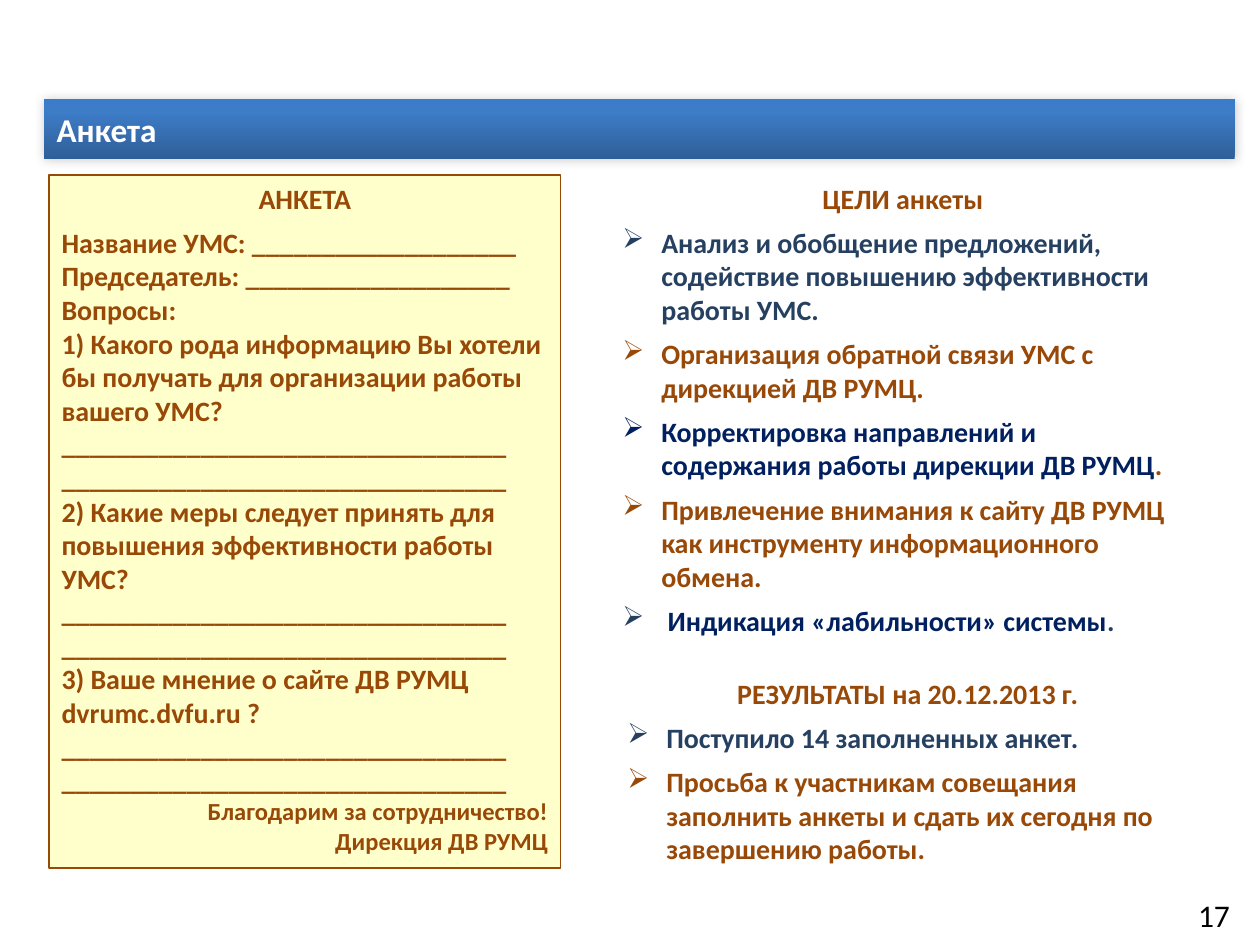
from copy import deepcopy

from lxml import etree
from pptx import Presentation
from pptx import util as u
from pptx.dml.color import RGBColor
from pptx.enum import shapes, text
from pptx.oxml import ns

WIDTH, HEIGHT = u.Inches(10), u.Inches(7.5)
FONT = "Calibri"
BROWN = RGBColor(0x98, 0x48, 0x07)
SLATE = RGBColor(0x25, 0x40, 0x61)
NAVY = RGBColor(0x00, 0x20, 0x60)
CREAM = RGBColor(0xFF, 0xFF, 0xCC)
WHITE = RGBColor(0xFF, 0xFF, 0xFF)
BLACK = RGBColor(0x00, 0x00, 0x00)
BANNER_STOPS = [
    (0, RGBColor(0x2F, 0x5F, 0x99)),
    (0.8, RGBColor(0x3D, 0x7C, 0xC7)),
    (1, RGBColor(0x3A, 0x7C, 0xCB)),
]
LEFT, CENTER, RIGHT = text.PP_ALIGN.LEFT, text.PP_ALIGN.CENTER, text.PP_ALIGN.RIGHT
INDENT = u.Inches(0.31)
ANSWER_LINES = ["_" * 32] * 2
FORM_LINES = [
    "Название УМС: " + "_" * 19,
    "Председатель: " + "_" * 19,
    "Вопросы:",
    "1) Какого рода информацию Вы хотели бы получать для организации работы вашего УМС?",
    *ANSWER_LINES,
    "2) Какие меры следует принять для повышения эффективности работы УМС?",
    *ANSWER_LINES,
    "3) Ваше мнение о сайте ДВ РУМЦ dvrumc.dvfu.ru ?",
    *ANSWER_LINES,
]
CLOSING_LINES = ["Благодарим за сотрудничество!", "Дирекция ДВ РУМЦ"]
GOALS = [
    [("Анализ и обобщение предложений, содействие повышению эффективности работы УМС.", SLATE)],
    [("Организация обратной связи УМС с дирекцией ДВ РУМЦ.", BROWN)],
    [("Корректировка направлений и содержания работы дирекции ДВ РУМЦ", NAVY), (".", BROWN)],
    [("Привлечение внимания к сайту ДВ РУМЦ как инструменту информационного обмена.", BROWN)],
    [(" ", SLATE), ("Индикация «лабильности» системы", NAVY), (".", SLATE)],
]
RESULTS = [
    [("Поступило 14 заполненных анкет.", SLATE)],
    [("Просьба к участникам совещания заполнить анкеты и сдать их сегодня по завершению работы.", BROWN)],
]


def area(left, top, width, height):
    return [int(share * side / 100) for share, side in
            zip((left, top, width, height), (WIDTH, HEIGHT, WIDTH, HEIGHT))]


def add_box(slide, place):
    shape = slide.shapes.add_textbox(*area(*place))
    shape.text_frame.word_wrap = True
    return shape


def add_rectangle(slide, place):
    shape = slide.shapes.add_shape(shapes.MSO_SHAPE.RECTANGLE, *area(*place))
    shape.shadow.inherit = False
    shape.text_frame.word_wrap = True
    return shape


def add_bullet(paragraph):
    properties = paragraph._p.get_or_add_pPr()
    properties.set("marL", str(INDENT))
    properties.set("indent", str(-INDENT))
    font = etree.SubElement(properties, ns.qn("a:buFont"))
    font.set("typeface", "Wingdings")
    font.set("charset", "2")
    etree.SubElement(properties, ns.qn("a:buChar")).set("char", "Ø")


def write(shape, content, size=16, color=BROWN, bold=True, align=LEFT, after=0, bullet=False):
    frame = shape.text_frame
    paragraph = frame.add_paragraph() if frame.text else frame.paragraphs[0]
    if bullet:
        add_bullet(paragraph)
    paragraph.alignment = align
    paragraph.space_after = u.Pt(after)
    runs = [(content, color)] if isinstance(content, str) else content
    for words, run_color in runs:
        run = paragraph.add_run()
        run.text = words
        run.font.name = FONT
        run.font.size = u.Pt(size)
        run.font.bold = bold
        run.font.color.rgb = run_color


def paint_gradient(shape, stops):
    shape.fill.gradient()
    shape.fill.gradient_angle = 90
    stop_list = next(shape._element.iter(ns.qn("a:gsLst")))
    stop_list.append(deepcopy(stop_list[-1]))
    for stop, (position, color) in zip(shape.fill.gradient_stops, stops):
        stop.position = position
        stop.color.rgb = color


def add_soft_shadow(shape):
    effects = next(shape._element.iter(ns.qn("a:effectLst")))
    shadow = etree.SubElement(effects, ns.qn("a:outerShdw"))
    shadow.set("blurRad", str(u.Pt(6)))
    shadow.set("dist", "0")
    shadow.set("rotWithShape", "0")
    color = etree.SubElement(shadow, ns.qn("a:srgbClr"))
    color.set("val", str(BLACK))
    etree.SubElement(color, ns.qn("a:alpha")).set("val", "20000")


def add_banner(slide, title):
    banner = add_rectangle(slide, (3.5, 10.53, 94.5, 6.27))
    paint_gradient(banner, BANNER_STOPS)
    banner.line.fill.background()
    add_soft_shadow(banner)
    banner.text_frame.vertical_anchor = text.MSO_ANCHOR.MIDDLE
    write(banner, title, size=19, color=WHITE)


def add_form(slide):
    form = add_rectangle(slide, (3.9, 18.53, 40.6, 73.33))
    form.fill.solid()
    form.fill.fore_color.rgb = CREAM
    form.line.color.rgb = BROWN
    form.line.width = u.Pt(1)
    form.text_frame.vertical_anchor = text.MSO_ANCHOR.TOP
    form.text_frame.auto_size = text.MSO_AUTO_SIZE.SHAPE_TO_FIT_TEXT
    write(form, "АНКЕТА", align=CENTER, after=6)
    for line in FORM_LINES:
        write(form, line)
    for line in CLOSING_LINES:
        write(form, line, size=14, align=RIGHT)


def add_bullet_list(slide, place, heading, items):
    box = add_box(slide, place)
    box.text_frame.auto_size = text.MSO_AUTO_SIZE.SHAPE_TO_FIT_TEXT
    write(box, heading, align=CENTER, after=6)
    for item in items:
        write(box, item, after=6, bullet=True)


def main():
    presentation = Presentation()
    presentation.slide_width, presentation.slide_height = WIDTH, HEIGHT
    slide = presentation.slides.add_slide(presentation.slide_layouts[6])
    number = add_box(slide, (94.1, 94.13, 5.1, 5.33))
    write(number, "17", size=18, color=BLACK, bold=False)
    add_banner(slide, "Анкета")
    add_form(slide)
    add_bullet_list(slide, (48.4, 18.53, 46.5, 50), "ЦЕЛИ анкеты", GOALS)
    add_bullet_list(slide, (48.8, 70.93, 46.5, 21.6), "РЕЗУЛЬТАТЫ на 20.12.2013 г.", RESULTS)
    presentation.save("out.pptx")


if __name__ == "__main__":
    main()
